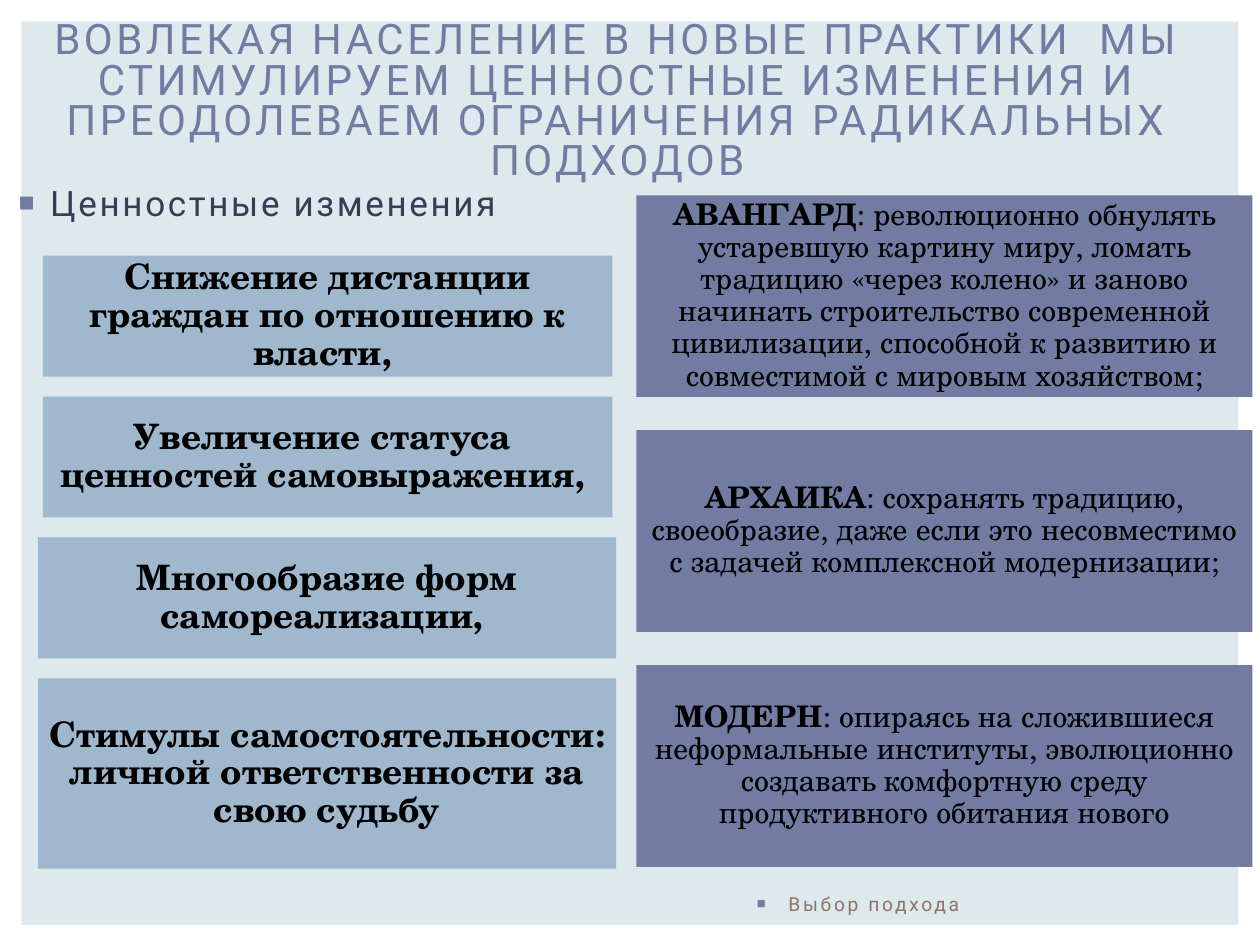
"""Build the slide on value changes and the choice of approach."""
from lxml import etree
from pptx import Presentation
from pptx import util as u
from pptx.dml.color import RGBColor
from pptx.enum import shapes, text
from pptx.oxml.ns import qn

HUE = {"panel": "DDE9EC", "accent": "727CA3", "pale": "9FB8CD",
       "ink": "000000", "navy": "373D54", "brown": "8E736A"}
SANS, SERIF = "Roboto", "TeX Gyre Schola"


def block(at, hue):
    box = deck.add_shape(shapes.MSO_SHAPE.RECTANGLE, *map(u.Inches, at))
    box.shadow.inherit = False
    box.fill.solid()
    box.fill.fore_color.rgb = RGBColor.from_string(HUE[hue])
    box.line.fill.background()
    return box


def style(run, size, hue, face, bold=False, gap=0):
    font = run.font
    font.size, font.name, font.bold = u.Pt(size), face, bold
    font.color.rgb = RGBColor.from_string(HUE[hue])
    if gap:
        run._r.get_or_add_rPr().set("spc", str(int(gap * 100)))


prs = Presentation()
prs.slide_width, prs.slide_height = u.Inches(10), u.Inches(7.5)
slide = prs.slides.add_slide(prs.slide_layouts[5])
deck = slide.shapes

title = deck.title
panel = block((0.17, 0.17, 9.66, 7.17), "panel")
title._element.addprevious(panel._element)

title.left, title.top = 0, u.Inches(0.3)
title.width, title.height = u.Inches(9.8), u.Inches(1.04)
frame = title.text_frame
frame.text = ("ВОВЛЕКАЯ НАСЕЛЕНИЕ В НОВЫЕ ПРАКТИКИ  МЫ СТИМУЛИРУЕМ "
              "ЦЕННОСТНЫЕ ИЗМЕНЕНИЯ И ПРЕОДОЛЕВАЕМ ОГРАНИЧЕНИЯ "
              "РАДИКАЛЬНЫХ ПОДХОДОВ")
frame.word_wrap = True
frame.auto_size = text.MSO_AUTO_SIZE.NONE
frame.vertical_anchor = text.MSO_ANCHOR.MIDDLE
para = frame.paragraphs[0]
para.alignment, para.line_spacing = text.PP_ALIGN.CENTER, 0.8
style(para.runs[0], 24, "accent", SANS, gap=2)

labels = [((0, 1.39, 4.42, 0.52), "Ценностные изменения", 20, "navy"),
          ((5.86, 7.03, 4.14, 0.26), "Выбор подхода", 11, "brown")]
for at, words, size, hue in labels:
    frame = deck.add_textbox(*map(u.Inches, at)).text_frame
    frame.word_wrap = True
    frame.text = words
    para = frame.paragraphs[0]
    style(para.runs[0], size, hue, SANS, gap=1.5)
    props = para._p.get_or_add_pPr()
    props.set("marL", str(u.Inches(0.3)))
    props.set("indent", str(u.Inches(-0.25)))
    tint = etree.SubElement(props, qn("a:buClr"))
    etree.SubElement(tint, qn("a:srgbClr"), val=HUE["accent"])
    etree.SubElement(props, qn("a:buSzPct"), val="76000")
    etree.SubElement(props, qn("a:buFont"), typeface="Arial")
    etree.SubElement(props, qn("a:buChar"), char="■")

values = [("Снижение дистанции граждан по отношению к власти, ", 0.34, 4.52, 0.96),
          ("Увеличение статуса  ценностей самовыражения, ", 0.34, 4.52, 0.96),
          ("Многообразие форм самореализации, ", 0.3, 4.59, 0.96),
          ("Стимулы самостоятельности: личной ответственности за свою судьбу",
           0.3, 4.59, 1.51)]
paths = [("АВАНГАРД", ": революционно обнулять устаревшую картину миру, ломать "
          "традицию «через колено» и заново начинать строительство современной "
          "цивилизации, способной к развитию и совместимой с мировым хозяйством;"),
         ("АРХАИКА", ": сохранять традицию, своеобразие, даже если это "
          "несовместимо с задачей комплексной модернизации;"),
         ("МОДЕРН", ": опираясь на сложившиеся неформальные институты, эволюционно "
          "создавать комфортную среду продуктивного обитания нового")]

cards = [((5.05, 1.55 + 1.865 * row, 4.89, 1.6), "accent", 17, 0.07, parts)
         for row, parts in enumerate(paths)]
cards += [((left, 2.03 + 1.118 * row, wide, high), "pale", 20, 0.08, (words,))
          for row, (words, left, wide, high) in enumerate(values)]

for at, hue, size, pad, parts in cards:
    frame = block(at, hue).text_frame
    frame.word_wrap = True
    frame.vertical_anchor = text.MSO_ANCHOR.MIDDLE
    frame.margin_left = frame.margin_right = u.Inches(pad)
    frame.margin_top = frame.margin_bottom = u.Inches(pad)
    para = frame.paragraphs[0]
    para.alignment, para.line_spacing = text.PP_ALIGN.CENTER, 0.9
    for spot, words in enumerate(parts):
        run = para.add_run()
        run.text = words
        style(run, size, "ink", SERIF, bold=spot == 0)

prs.save("out.pptx")
